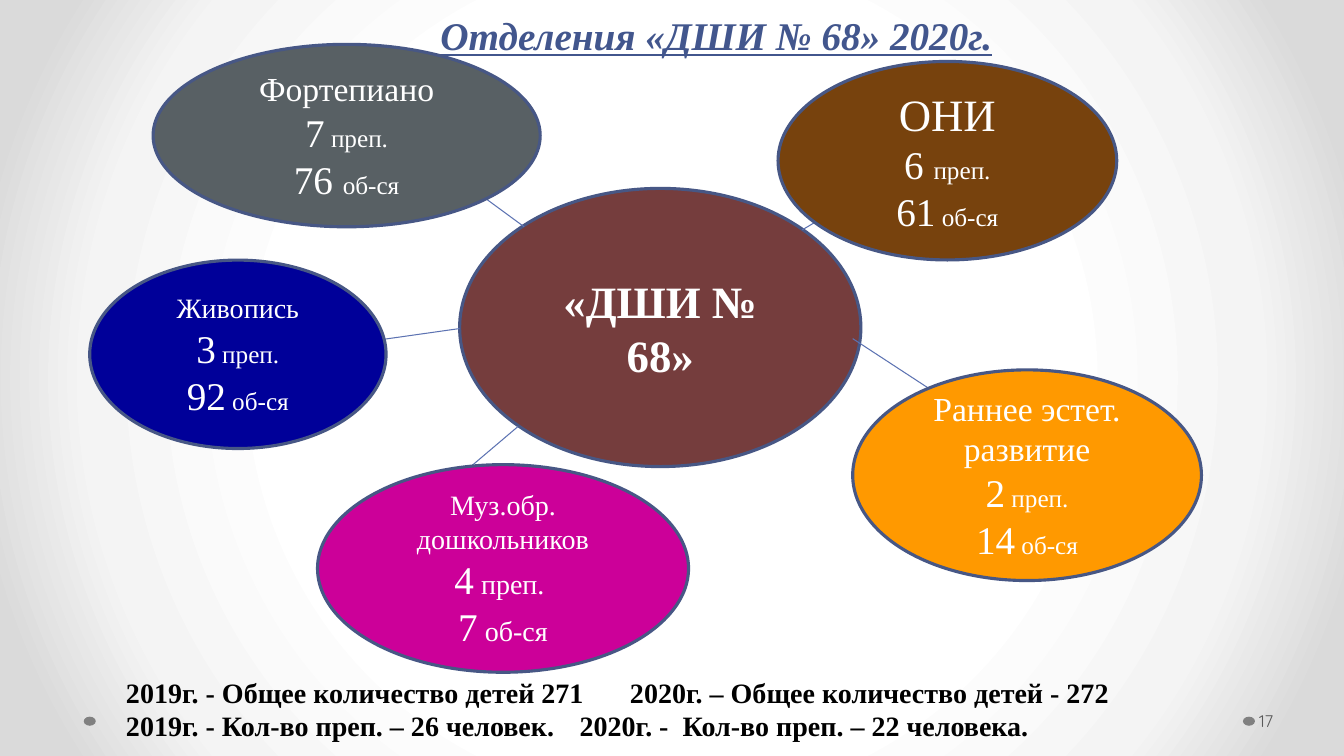
from lxml import etree
from pptx import Presentation
from pptx.dml.color import RGBColor
from pptx.enum import shapes as kinds, text as txt
from pptx.oxml import parse_xml
from pptx.oxml.ns import nsdecls, qn
from pptx.util import Pt

SERIF = "Times New Roman"
WHITE = RGBColor(0xFF, 0xFF, 0xFF)
BLACK = RGBColor(0, 0, 0)
NAVY = RGBColor(0x42, 0x56, 0x8D)
RIM = RGBColor(0x47, 0x57, 0x85)
LINK = RGBColor(0x5C, 0x72, 0xB2)
DOT = RGBColor(0x80, 0x80, 0x80)
GREY = RGBColor(0x59, 0x59, 0x59)
WINE = RGBColor(0x75, 0x3D, 0x3D)
PINK = RGBColor(0xCC, 0x00, 0x99)
AMBER = RGBColor(0xFF, 0x99, 0x00)
BLUE = RGBColor(0x00, 0x00, 0x99)
SLATE = RGBColor(0x58, 0x60, 0x64)
BROWN = RGBColor(0x77, 0x42, 0x0D)

# box, fill, name, name size, then rows of (count, unit), unit size
UNITS = [
    ((226.8, 331.9, 265, 148.3), PINK, "Муз.обр. дошкольников", 20,
     [("4", " преп. "), ("7", " об-ся")], 20),
    ((609.1, 264.2, 249.1, 150.5), AMBER, "Раннее эстет. развитие", 24,
     [("2", " преп."), ("14", " об-ся")], 18),
    ((64.1, 185.8, 211.7, 134.6), BLUE, "Живопись", 20,
     [("3", " преп."), ("92", " об-ся")], 18),
    ((109.4, 31.7, 276.5, 130.3), SLATE, "Фортепиано", 24,
     [("7", " преп."), ("76 ", "об-ся")], 18),
    ((555.8, 43.9, 241.9, 141.8), BROWN, "ОНИ", 32,
     [("6 ", "преп."), ("61", " об-ся")], 18),
]
LINKS = [
    (328.3, 234.7, 252, 245.5),
    (370.1, 304.6, 289.4, 373),
    (609.1, 241.9, 677.5, 286.6),
    (573.1, 164.2, 640.8, 123.8),
    (374.4, 162, 314.6, 118.1),
]
TOTALS = [
    ("2019г. - Общее количество детей 271", "2020г. – Общее количество детей - 272"),
    ("2019г. - Кол-во преп. – 26 человек.", "2020г. -  Кол-во преп. – 22 человека."),
]


def paint(slide):
    """Give the slide a radial white-to-grey background."""
    stops = "".join(
        f'<a:gs pos="{pos}000"><a:srgbClr val="{tone}"/></a:gs>'
        for pos, tone in [(0, "FFFFFF"), (50, "FFFFFF"), (76, "F4F4F4"),
                          (92, "DADADA"), (100, "DADADA")])
    back = parse_xml(
        f'<p:bg {nsdecls("p", "a")}><p:bgPr><a:gradFill rotWithShape="1">'
        f'<a:gsLst>{stops}</a:gsLst><a:path path="circle">'
        '<a:fillToRect l="50000" t="50000" r="50000" b="50000"/></a:path>'
        '</a:gradFill><a:effectLst/></p:bgPr></p:bg>')
    slide.element.cSld.insert(0, back)


def place(shape, box):
    shape.left, shape.top, shape.width, shape.height = map(Pt, box)


def style(run, size, color, bold=False, face=SERIF):
    font = run.font
    font.name, font.size, font.bold = face, Pt(size), bold
    font.color.rgb = color


def inset(frame, left, right):
    frame.margin_left, frame.margin_right = Pt(left), Pt(right)
    frame.word_wrap = True
    frame.auto_size = txt.MSO_AUTO_SIZE.NONE
    frame.vertical_anchor = txt.MSO_ANCHOR.MIDDLE


def oval(slide, box, fill, rim=None):
    shape = slide.shapes.add_shape(kinds.MSO_SHAPE.OVAL, *map(Pt, box))
    shape.shadow.inherit = False
    shape.fill.solid()
    shape.fill.fore_color.rgb = fill
    if rim is None:
        shape.line.fill.background()
    else:
        shape.line.color.rgb = rim
        shape.line.width = Pt(2.25)
    return shape


def label(shape, rows, bold=False):
    """Write centred rows, each a list of (words, size)."""
    frame = shape.text_frame
    frame.word_wrap = True
    frame.vertical_anchor = txt.MSO_ANCHOR.MIDDLE
    for i, row in enumerate(rows):
        para = frame.add_paragraph() if i else frame.paragraphs[0]
        para.alignment = txt.PP_ALIGN.CENTER
        for words, size in row:
            run = para.add_run()
            run.text = words
            style(run, size, WHITE, bold)


def link(slide, ends):
    line = slide.shapes.add_connector(kinds.MSO_CONNECTOR.STRAIGHT, *map(Pt, ends))
    line.line.color.rgb = LINK
    line.line.width = Pt(0.75)
    etree.SubElement(line.element.spPr, qn("a:effectLst"))


def head(shape):
    place(shape, (307.4, 4.3, 504, 41))
    inset(shape.text_frame, 7.2, 7.2)
    para = shape.text_frame.paragraphs[0]
    para.text = "Отделения «ДШИ № 68» 2020г."
    para.alignment = txt.PP_ALIGN.LEFT
    run = para.runs[0]
    style(run, 28, NAVY, True)
    run.font.italic = run.font.underline = True


def sums(shape):
    """Write the yearly totals in two tabbed columns."""
    place(shape, (86.4, 472.3, 793.4, 67.7))
    frame = shape.text_frame
    inset(frame, 3.6, 7.2)
    frame.text = "\n".join("\t".join(pair) for pair in TOTALS)
    for para in frame.paragraphs:
        para.space_before = Pt(0)
        props = para._p.get_or_add_pPr()
        props.set("marL", "0")
        props.set("indent", "0")
        etree.SubElement(props, qn("a:buNone"))
        tabs = etree.SubElement(props, qn("a:tabLst"))
        etree.SubElement(tabs, qn("a:tab"), pos=str(Pt(436)), algn="l")
        for run in para.runs:
            style(run, 20, BLACK, True)


def number(slide):
    box = slide.shapes.add_textbox(*map(Pt, (897.1, 500.4, 59, 28.8)))
    inset(box.text_frame, 2.2, 3.6)
    box.text_frame.text = "17"
    style(box.text_frame.paragraphs[0].runs[0], 12, GREY, face="Quicksand")


def main():
    deck = Presentation()
    deck.slide_width, deck.slide_height = Pt(960), Pt(540)
    slide = deck.slides.add_slide(deck.slide_layouts[1])
    paint(slide)
    head(slide.shapes.title)
    sums(slide.placeholders[1])
    for left in (887.8, 59.8):
        oval(slide, (left, 511.9, 8.6, 6.5), DOT)
    hub = oval(slide, (328.3, 134.6, 286.6, 198.7), WINE, RIM)
    label(hub, [[("«ДШИ № 68»", 32)]], True)
    for ends in LINKS:
        link(slide, ends)
    for box, fill, name, size, rows, small in UNITS:
        counts = [[(count, 28), (unit, small)] for count, unit in rows]
        label(oval(slide, box, fill, RIM), [[(name, size)]] + counts)
    number(slide)
    deck.save("out.pptx")


if __name__ == "__main__":
    main()
